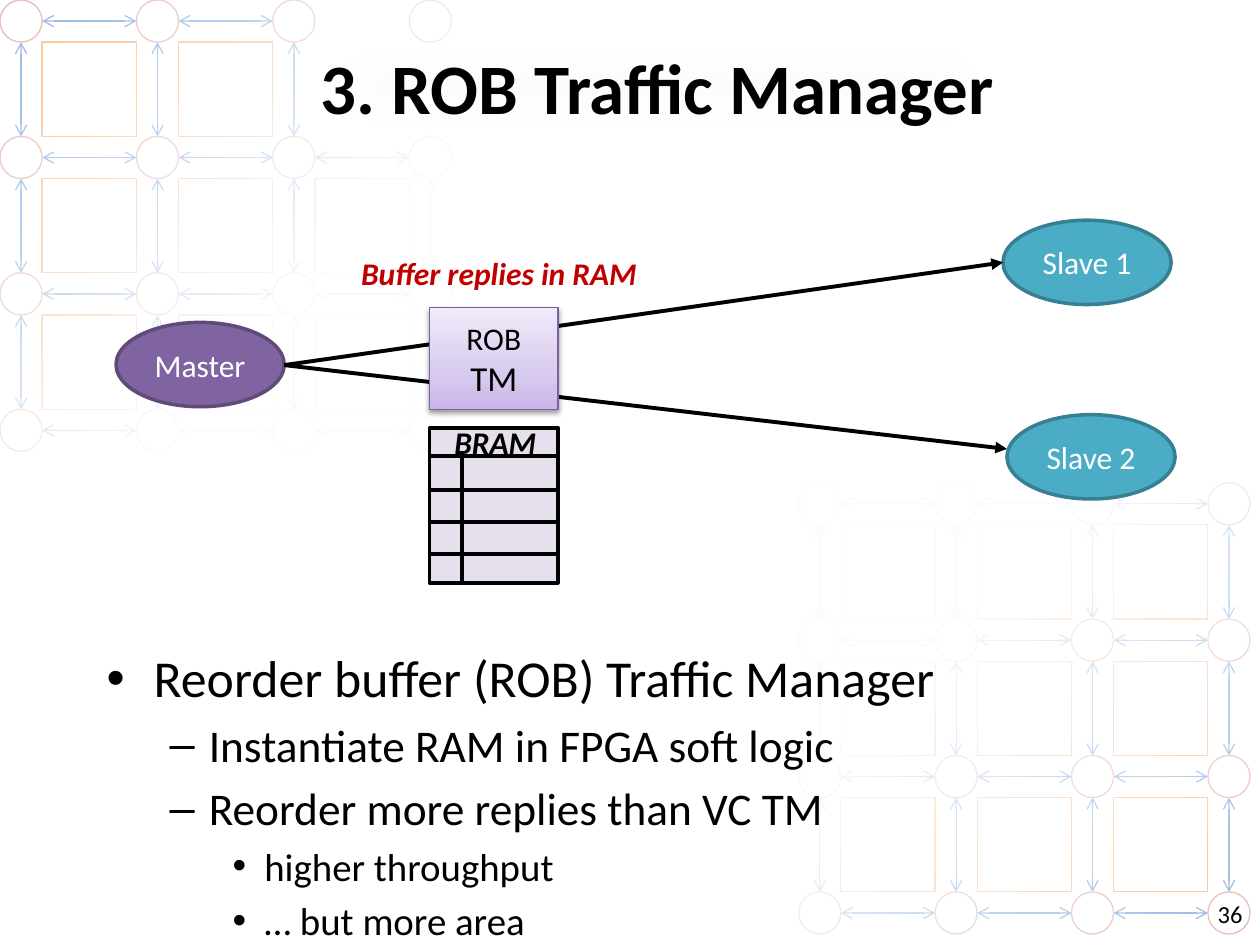
from itertools import product

from lxml.etree import SubElement
from pptx import Presentation
from pptx.dml.color import RGBColor
from pptx.enum.shapes import MSO_CONNECTOR, MSO_SHAPE as SHAPE
from pptx.enum.text import MSO_ANCHOR as ANCHOR, PP_ALIGN as ALIGN
from pptx.oxml.ns import qn
from pptx.util import Cm, Pt

WHITE = RGBColor(0xFF, 0xFF, 0xFF)
BLACK = RGBColor(0, 0, 0)
RED = RGBColor(0xC0, 0, 0)
SQUARE_LINE = RGBColor(0xFA, 0xC0, 0x90)
ROUTER_LINE = RGBColor(0xE6, 0xB9, 0xB8)
LINK_BLUE = RGBColor(0x8E, 0xB4, 0xE3)
TITLE_TINT = RGBColor(0xC6, 0xD9, 0xF1)
PURPLE = RGBColor(0x80, 0x64, 0xA2)
DARK_PURPLE = RGBColor(0x5F, 0x4A, 0x78)
ROB_LINE = RGBColor(0x7D, 0x60, 0xA0)
TEAL = RGBColor(0x4B, 0xAC, 0xC6)
DARK_TEAL = RGBColor(0x37, 0x7F, 0x92)
LILAC = RGBColor(0xE6, 0xE0, 0xEC)


def draw_shape(shapes, kind, box, fill=None, line=None, width=0.75):
    """Add a shadowless preset shape; box is left, top, width, height in cm."""
    shape = shapes.add_shape(kind, *map(Cm, box))
    shape.shadow.inherit = False
    if fill is None:
        shape.fill.background()
    else:
        shape.fill.solid()
        shape.fill.fore_color.rgb = fill
    if line is None:
        shape.line.fill.background()
    else:
        shape.line.color.rgb = line
        shape.line.width = Pt(width)
    return shape


def draw_line(shapes, start, end, color, width, **arrowheads):
    """Add a line; arrowheads maps headEnd and tailEnd to their types."""
    line = shapes.add_connector(MSO_CONNECTOR.STRAIGHT, *map(Cm, start + end))
    line.line.color.rgb = color
    line.line.width = Pt(width)
    properties = line._element.spPr
    for tag, kind in arrowheads.items():
        SubElement(properties.find(qn("a:ln")), qn(f"a:{tag}"), type=kind)
    SubElement(properties, qn("a:effectLst"))


prs = Presentation()
prs.slide_width, prs.slide_height = Cm(25.4), Cm(19.05)
slide = prs.slides.add_slide(prs.slide_layouts[6])
shapes = slide.shapes

# Background networks, each under a fading veil
ROUTER, SQUARE = 0.85, 1.9
PITCH = ROUTER + SQUARE
both_ends = {"headEnd": "arrow", "tailEnd": "arrow"}
veils = []
networks = [
    (0, 0, True, (0, 0, 9.3, 9.32), 0),
    (16.1, 9.73, False, (15.88, 9.32, 9.52, 9.73), 180),
]
for left, top, open_corner, veil_box, turn in networks:
    for row, col in product(range(4), range(4)):
        x, y = left + col * PITCH, top + row * PITCH
        inner_x, inner_y = x + ROUTER, y + ROUTER
        mid_x, mid_y = x + ROUTER / 2, y + ROUTER / 2
        draw_shape(shapes, SHAPE.OVAL, (x, y, ROUTER, ROUTER), WHITE, ROUTER_LINE)
        at_corner = open_corner and row == 0
        if col < 3 and not (at_corner and col == 2):
            draw_line(shapes, (inner_x, mid_y), (x + PITCH, mid_y),
                      LINK_BLUE, 0.75, **both_ends)
            if row < 3:
                draw_shape(shapes, SHAPE.RECTANGLE,
                           (inner_x, inner_y, SQUARE, SQUARE), None, SQUARE_LINE)
        if row < 3 and not (at_corner and col == 3):
            draw_line(shapes, (mid_x, y + PITCH), (mid_x, inner_y),
                      LINK_BLUE, 0.75, **both_ends)
    veil = draw_shape(shapes, SHAPE.RECTANGLE, veil_box, WHITE)
    veil.rotation = turn
    veils.append(veil)

# Title on a soft tint
title = draw_shape(shapes, SHAPE.RECTANGLE, (5.94, 0.33, 14.63, 2.8), TITLE_TINT)
tint = title._element.spPr.find(qn("a:solidFill"))[0]
SubElement(tint, qn("a:alpha"), val="10000")
SubElement(title._element.spPr.find(qn("a:effectLst")), qn("a:softEdge"),
           rad=str(Cm(0.8)))

# Body bullets
body = shapes.add_textbox(Cm(1.9), Cm(12.9), Cm(21.8), Cm(5.54)).text_frame
body.word_wrap = True
levels = [  # size, left margin, hanging indent, space before, bullet
    (29.6, 0.95, 0.95, 6, "•"),
    (25.9, 2.06, 0.79, 5, "–"),
    (22.2, 3.18, 0.64, 4.4, "•"),
]
bullets = [
    (0, "Reorder buffer (ROB) Traffic Manager"),
    (1, "Instantiate RAM in FPGA soft logic"),
    (1, "Reorder more replies than VC TM"),
    (2, "higher throughput"),
    (2, "… but more area"),
]
for number, (level, words) in enumerate(bullets):
    size, margin, hanging, gap, mark = levels[level]
    paragraph = body.add_paragraph() if number else body.paragraphs[0]
    paragraph.text = words
    paragraph.level = level
    if number:
        paragraph.space_before = Pt(gap)
    properties = paragraph._p.get_or_add_pPr()
    properties.set("marL", str(Cm(margin)))
    properties.set("indent", str(-Cm(hanging)))
    SubElement(properties, qn("a:buFont"), typeface="Arial")
    SubElement(properties, qn("a:buChar"), char=mark)
    font = paragraph.runs[0].font
    font.name, font.size, font.color.rgb = "Calibri", Pt(size), BLACK

page_number = shapes.add_textbox(Cm(24.25), Cm(17.9), Cm(1.1), Cm(1.02))

# Traffic diagram
NODE = (3.39, 1.7)
master = draw_shape(shapes, SHAPE.OVAL, (2.34, 6.5, *NODE), PURPLE, DARK_PURPLE, 2)
slave_1 = draw_shape(shapes, SHAPE.OVAL, (20.22, 4.44, *NODE), TEAL, DARK_TEAL, 2)
for target in [(20.22, 5.29), (20.3, 9.05)]:
    draw_line(shapes, (5.73, 7.36), target, BLACK, 2.25, tailEnd="triangle")
slave_2 = draw_shape(shapes, SHAPE.OVAL, (20.3, 8.36, *NODE), TEAL, DARK_TEAL, 2)

rob = draw_shape(shapes, SHAPE.RECTANGLE, (8.66, 6.2, 2.59, 2.06), LILAC, ROB_LINE)
shadow = SubElement(rob._element.spPr.find(qn("a:effectLst")), qn("a:outerShdw"),
                    blurRad=str(Pt(3.1)), dist=str(Pt(1.6)), dir="5400000",
                    rotWithShape="0")
shadow_color = SubElement(shadow, qn("a:srgbClr"), val="000000")
SubElement(shadow_color, qn("a:alpha"), val="38000")
buffer_note = shapes.add_textbox(Cm(7.03), Cm(5), Cm(6.17), Cm(1.02))

bram = shapes.add_group_shape().shapes
draw_shape(bram, SHAPE.RECTANGLE, (8.66, 8.63, 2.59, 3.12), LILAC, BLACK, 2)
for y in (9.19, 9.88, 10.52, 11.16):
    draw_line(bram, (8.66, y), (11.25, y), BLACK, 2.25)
draw_line(bram, (9.32, 9.22), (9.32, 11.74), BLACK, 2.25)
bram_name = bram.add_textbox(Cm(8.91), Cm(8.41), Cm(2.18), Cm(1.02))

# Gradients: stops are position, colour and opacity in percent
veil_stops = [(0, WHITE, 0), (66, WHITE, 93)]
rob_stops = [
    (0, RGBColor(0xC9, 0xB5, 0xE8), 100),
    (35, RGBColor(0xD8, 0xCB, 0xEE), 100),
    (100, RGBColor(0xF0, 0xEA, 0xF9), 100),
]
for shape, stops, angle in [*((veil, veil_stops, 45) for veil in veils),
                            (rob, rob_stops, 270)]:
    shape.fill.gradient()
    gradient = shape._element.spPr.find(qn("a:gradFill"))
    gradient.find(qn("a:lin")).set("ang", str(angle * 60000))
    stop_list = gradient.find(qn("a:gsLst"))
    for old_stop in list(stop_list):
        stop_list.remove(old_stop)
    for position, color, opacity in stops:
        stop = SubElement(stop_list, qn("a:gs"), pos=str(position * 1000))
        stop_color = SubElement(stop, qn("a:srgbClr"), val=str(color))
        SubElement(stop_color, qn("a:alpha"), val=str(opacity * 1000))

# Labels: holder, lines with sizes, colour, bold, italic, alignment
labels = [
    (title, [("3. ROB Traffic Manager", 40.5)], BLACK, True, False, ALIGN.CENTER),
    (page_number, [("36", 14)], BLACK, False, False, ALIGN.CENTER),
    (master, [("Master", 18)], WHITE, False, False, ALIGN.CENTER),
    (slave_1, [("Slave 1", 18)], WHITE, False, False, ALIGN.CENTER),
    (slave_2, [("Slave 2", 18)], WHITE, False, False, ALIGN.CENTER),
    (rob, [("ROB", 18), ("TM", 20)], BLACK, False, False, ALIGN.CENTER),
    (buffer_note, [("Buffer replies in RAM", 18)], RED, True, True, ALIGN.LEFT),
    (bram_name, [("BRAM", 18)], BLACK, True, True, ALIGN.LEFT),
]
for holder, lines, color, bold, italic, align in labels:
    frame = holder.text_frame
    frame.word_wrap = align == ALIGN.CENTER
    frame.vertical_anchor = ANCHOR.MIDDLE if align == ALIGN.CENTER else ANCHOR.TOP
    frame.text = "\n".join(words for words, _ in lines)
    for paragraph, (_, size) in zip(frame.paragraphs, lines):
        paragraph.alignment = align
        font = paragraph.runs[0].font
        font.name, font.size, font.color.rgb = "Calibri", Pt(size), color
        font.bold, font.italic = bold, italic
page_number.text_frame.margin_left = page_number.text_frame.margin_right = 0

prs.save("out.pptx")
